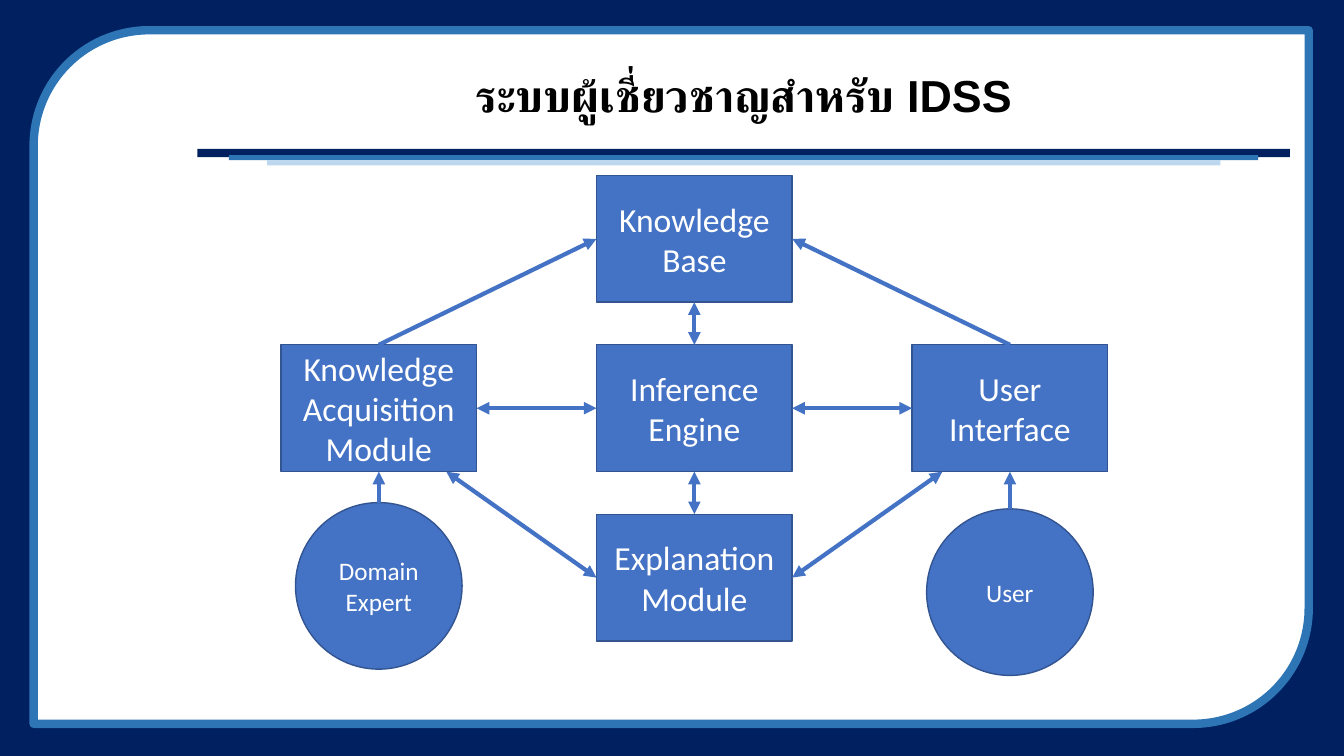
from dataclasses import dataclass
from typing import NamedTuple

from lxml import etree
from pptx import Presentation
from pptx.dml import color
from pptx.enum import shapes, text
from pptx.oxml import ns
from pptx.util import Pt

RECTANGLE = shapes.MSO_SHAPE.RECTANGLE
ELLIPSE = shapes.MSO_SHAPE.OVAL
FRAME = shapes.MSO_SHAPE.ROUND_2_DIAG_RECTANGLE


@dataclass(frozen=True)
class Theme:
    navy: str = "002060"
    blue: str = "2E75B6"
    pale: str = "BDD7EE"
    node: str = "4472C4"
    node_line: str = "325491"
    white: str = "FFFFFF"
    black: str = "000000"
    title_font: str = "Arial"
    body_font: str = "Calibri"
    title_size: float = 32
    module_size: float = 24
    actor_size: float = 18


class Point(NamedTuple):
    x: float
    y: float


@dataclass(frozen=True)
class Panel:
    left: float
    top: float
    width: float
    height: float
    fill: str
    kind: int = RECTANGLE
    line: str = ""
    line_width: float = 0


@dataclass(frozen=True)
class Node:
    label: str
    center: Point
    width: float
    height: float
    size: float
    kind: int = RECTANGLE

    def at(self, across: float, down: float) -> Point:
        return Point(
            self.center.x + across * self.width / 2,
            self.center.y + down * self.height / 2,
        )


class Link(NamedTuple):
    start: Point
    end: Point
    both_ways: bool


THEME = Theme()
COLUMNS = [496 + step * 225.4 for step in (-1, 0, 1)]
ROWS = [291.6 + step * 121 for step in (-1, 0, 1)]


def module(label: str, column: int, row: int) -> Node:
    center = Point(COLUMNS[column], ROWS[row])
    return Node(label, center, 139.8, 90.6, THEME.module_size)


def actor(label: str, column: int, top: float) -> Node:
    diameter = 119
    center = Point(COLUMNS[column], top + diameter / 2)
    return Node(label, center, diameter, diameter, THEME.actor_size, ELLIPSE)


def add_panel(slide, panel: Panel):
    shape = slide.shapes.add_shape(
        panel.kind, Pt(panel.left), Pt(panel.top), Pt(panel.width), Pt(panel.height)
    )
    shape.shadow.inherit = False
    shape.fill.solid()
    shape.fill.fore_color.rgb = color.RGBColor.from_string(panel.fill)
    if panel.line:
        shape.line.color.rgb = color.RGBColor.from_string(panel.line)
        shape.line.width = Pt(panel.line_width)
    else:
        shape.line.fill.background()
    return shape


def write(shape, wording: str, font_name: str, size: float, ink: str, bold: bool = False) -> None:
    text_frame = shape.text_frame
    text_frame.word_wrap = True
    text_frame.vertical_anchor = text.MSO_ANCHOR.MIDDLE
    text_frame.text = wording
    for paragraph in text_frame.paragraphs:
        paragraph.alignment = text.PP_ALIGN.CENTER
        for run in paragraph.runs:
            run.font.name = font_name
            run.font.size = Pt(size)
            run.font.bold = bold
            run.font.color.rgb = color.RGBColor.from_string(ink)


def add_title(slide, wording: str) -> None:
    box = slide.shapes.add_textbox(Pt(141), Pt(35.3), Pt(780.5), Pt(69.8))
    write(box, wording, THEME.title_font, THEME.title_size, THEME.black, bold=True)
    paragraph = box.text_frame.paragraphs[0]
    paragraph.line_spacing = 0.9
    properties = paragraph.runs[0].font._element
    etree.SubElement(properties, ns.qn("a:cs"), typeface=THEME.title_font)


def add_node(slide, node: Node) -> None:
    corner = node.at(-1, -1)
    panel = Panel(
        corner.x, corner.y, node.width, node.height, THEME.node, node.kind, THEME.node_line, 1
    )
    write(add_panel(slide, panel), node.label, THEME.body_font, node.size, THEME.white)


def add_link(slide, link: Link) -> None:
    connector = slide.shapes.add_connector(
        shapes.MSO_CONNECTOR.STRAIGHT,
        Pt(link.start.x), Pt(link.start.y), Pt(link.end.x), Pt(link.end.y),
    )
    connector.line.color.rgb = color.RGBColor.from_string(THEME.node)
    connector.line.width = Pt(3)
    line = connector.line._get_or_add_ln()
    if link.both_ways:
        etree.SubElement(line, ns.qn("a:headEnd"), type="triangle")
    etree.SubElement(line, ns.qn("a:tailEnd"), type="triangle")
    etree.SubElement(connector._element.spPr, ns.qn("a:effectLst"))


def main() -> None:
    presentation = Presentation()
    presentation.slide_width = Pt(960)
    presentation.slide_height = Pt(540)
    slide = presentation.slides.add_slide(presentation.slide_layouts[6])

    panels = [
        Panel(0, 0, 960, 540, THEME.navy),
        Panel(24, 21.6, 910.8, 495.4, THEME.white, FRAME, THEME.blue, 6),
        Panel(141, 106.4, 780.5, 5.8, THEME.navy),
        Panel(163.5, 110.8, 735.3, 3.6, THEME.blue),
        Panel(190.8, 114.4, 681, 3.8, THEME.pale),
    ]
    for panel in panels:
        add_panel(slide, panel)
    add_title(slide, "ระบบผู้เชี่ยวชาญสำหรับ IDSS")

    inference = module("Inference\nEngine", 1, 1)
    interface = module("User\nInterface", 2, 1)
    acquisition = module("Knowledge\nAcquisition\nModule", 0, 1)
    explanation = module("Explanation\nModule", 1, 2)
    knowledge = module("Knowledge\nBase", 1, 0)
    expert = actor("Domain\nExpert", 0, 359)
    user = actor("User", 2, 363.5)
    for node in (inference, interface, acquisition, explanation, knowledge, expert, user):
        add_node(slide, node)

    links = [
        Link(knowledge.at(0, 1), inference.at(0, -1), True),
        Link(inference.at(0, 1), explanation.at(0, -1), True),
    ]
    for outer, person, side in ((acquisition, expert, -1), (interface, user, 1)):
        links += [
            Link(inference.at(side, 0), outer.at(-side, 0), True),
            Link(outer.at(-side * 0.69, 1), explanation.at(side, 0), True),
            Link(outer.at(0, -1), knowledge.at(side, 0), False),
            Link(person.at(0, -1), outer.at(0, 1), False),
        ]
    for link in links:
        add_link(slide, link)

    presentation.save("out.pptx")


if __name__ == "__main__":
    main()
